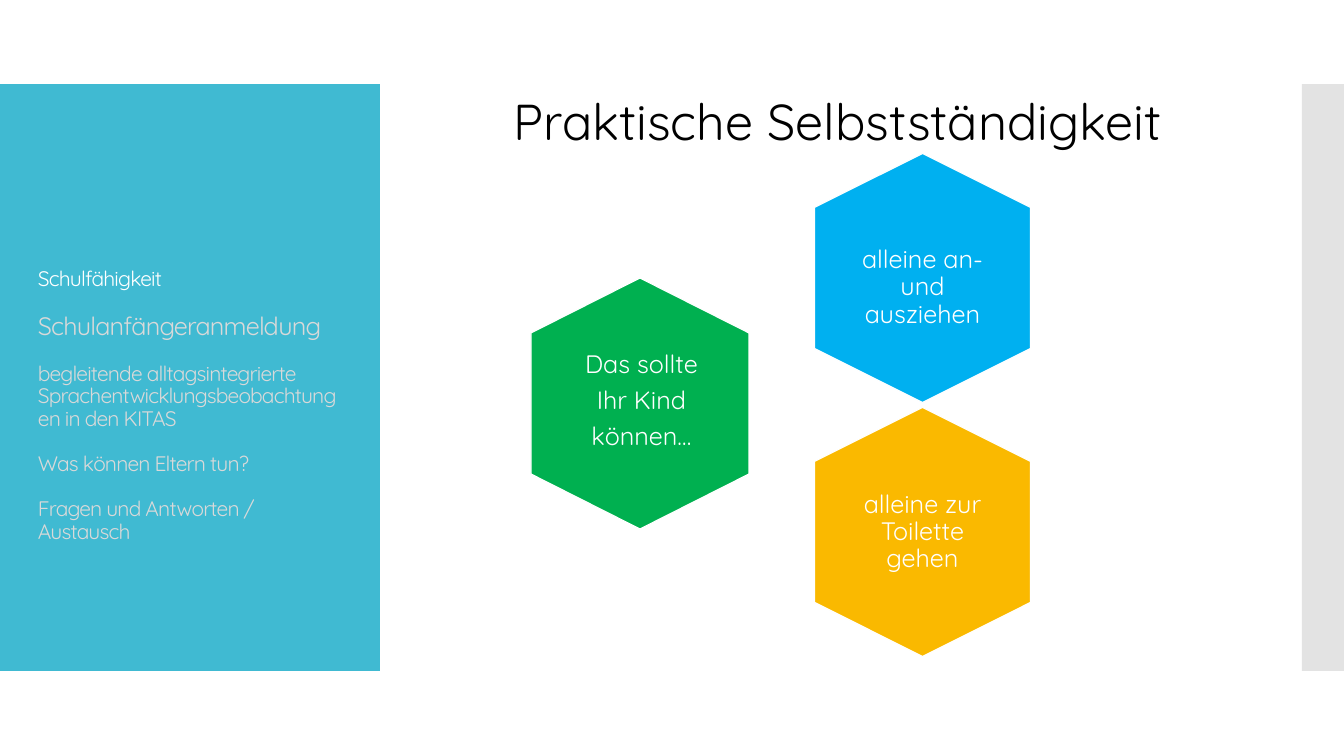
from lxml import etree
from pptx import Presentation
from pptx.dml.color import RGBColor
from pptx.enum.shapes import MSO_SHAPE
from pptx.enum.text import MSO_ANCHOR, PP_ALIGN
from pptx.oxml.ns import qn
from pptx.util import Pt

EMU_PER_PX = 914400 / 100.8
FONT = "Quicksand"
RECTANGLE, HEXAGON = MSO_SHAPE.RECTANGLE, MSO_SHAPE.HEXAGON
TOP, MIDDLE = MSO_ANCHOR.TOP, MSO_ANCHOR.MIDDLE
LEFT, CENTER = PP_ALIGN.LEFT, PP_ALIGN.CENTER

WHITE = RGBColor(0xFF, 0xFF, 0xFF)
BLACK = RGBColor(0x00, 0x00, 0x00)
TURQUOISE = RGBColor(0x40, 0xBA, 0xD2)
GREY = RGBColor(0xC8, 0xC8, 0xC8)
LIGHT_GREY = RGBColor(0xD9, 0xD9, 0xD9)
GREEN = RGBColor(0x00, 0xB0, 0x50)
BLUE = RGBColor(0x00, 0xB0, 0xF0)
YELLOW = RGBColor(0xFA, 0xB9, 0x00)

AGENDA = [
    ("Schulfähigkeit", 15, WHITE),
    ("Schulanfängeranmeldung", 18, LIGHT_GREY),
    ("begleitende alltagsintegrierte Sprachentwicklungsbeobachtungen "
     "in den KITAS", 15, LIGHT_GREY),
    ("Was können Eltern tun?", 15, LIGHT_GREY),
    ("Fragen und Antworten / Austausch", 15, LIGHT_GREY),
]


def px(length):
    return round(length * EMU_PER_PX)


def paint(shape, fill, outline=None):
    shape.shadow.inherit = False
    shape.fill.solid()
    shape.fill.fore_color.rgb = fill
    if outline is None:
        shape.line.fill.background()
    else:
        shape.line.color.rgb = outline
        shape.line.width = Pt(0.85)


def add_band(slide, left, width, fill):
    band = slide.shapes.add_shape(RECTANGLE, px(left), px(84), px(width), px(587))
    paint(band, fill)
    return band


def make_half_transparent(shape):
    color = shape.fill._xPr.find(qn("a:solidFill"))[0]
    etree.SubElement(color, qn("a:alpha")).set("val", "50000")


def add_turned_hexagon(slide, left, top, fill):
    """Add a preset hexagon turned by 90 degrees so that it stands on a corner."""
    hexagon = slide.shapes.add_shape(HEXAGON, px(left), px(top), px(249), px(216))
    hexagon.adjustments[0] = 0.25
    hexagon.rotation = 90
    paint(hexagon, fill, WHITE)


def add_outlined_hexagon(slide, left, top, fill):
    """Add a hexagon that stands on a corner, drawn point by point."""
    width, height, shoulder = 218, 251, 55
    center, right = left + width // 2, left + width
    upper, lower = top + shoulder, top + height - shoulder
    builder = slide.shapes.build_freeform(center, top, scale=EMU_PER_PX)
    builder.add_line_segments([(right, upper), (right, lower), (center, top + height),
                               (left, lower), (left, upper)])
    paint(builder.convert_to_shape(), fill, WHITE)


def add_text(slide, box, lines, align=CENTER, anchor=TOP, line_spacing=0.9,
             space_after=0, tracking=None):
    """Add a text box; each line is (text, size, color), tracking is in 1/100 pt."""
    frame = slide.shapes.add_textbox(*map(px, box)).text_frame
    frame.word_wrap = True
    frame.vertical_anchor = anchor
    for index, (text, size, color) in enumerate(lines):
        paragraph = frame.paragraphs[0] if index == 0 else frame.add_paragraph()
        run = paragraph.add_run()
        run.text = text
        if tracking is not None:
            run._r.get_or_add_rPr().set("spc", str(tracking))
        paragraph.alignment = align
        paragraph.line_spacing = line_spacing
        if index < len(lines) - 1:
            paragraph.space_after = Pt(space_after)
        paragraph.font.name = FONT
        paragraph.font.size = Pt(size)
        paragraph.font.color.rgb = color


def add_label(slide, box, *lines, anchor=TOP):
    add_text(slide, box, [(line, 18, WHITE) for line in lines],
             anchor=anchor, space_after=6)


def main():
    presentation = Presentation()
    presentation.slide_width, presentation.slide_height = px(1344), px(756)
    slide = presentation.slides.add_slide(presentation.slide_layouts[6])

    add_band(slide, 0, 380, TURQUOISE)
    make_half_transparent(add_band(slide, 1302, 42, GREY))
    add_text(slide, (28, 181, 325, 450), AGENDA, align=LEFT, anchor=MIDDLE,
             space_after=16, tracking=-60)
    add_text(slide, (419, 85, 837, 72),
             [("Praktische Selbstständigkeit", 36, BLACK)], line_spacing=1)

    add_turned_hexagon(slide, 798, 424, YELLOW)
    add_label(slide, (848, 447, 149, 171), "alleine zur Toilette gehen", anchor=MIDDLE)
    add_turned_hexagon(slide, 798, 170, BLUE)
    add_label(slide, (837, 242, 171, 93), "alleine an- und ausziehen")
    add_outlined_hexagon(slide, 531, 278, GREEN)
    add_label(slide, (556, 347, 171, 114), "Das sollte", "Ihr Kind", "können…")

    presentation.save("out.pptx")


if __name__ == "__main__":
    main()
